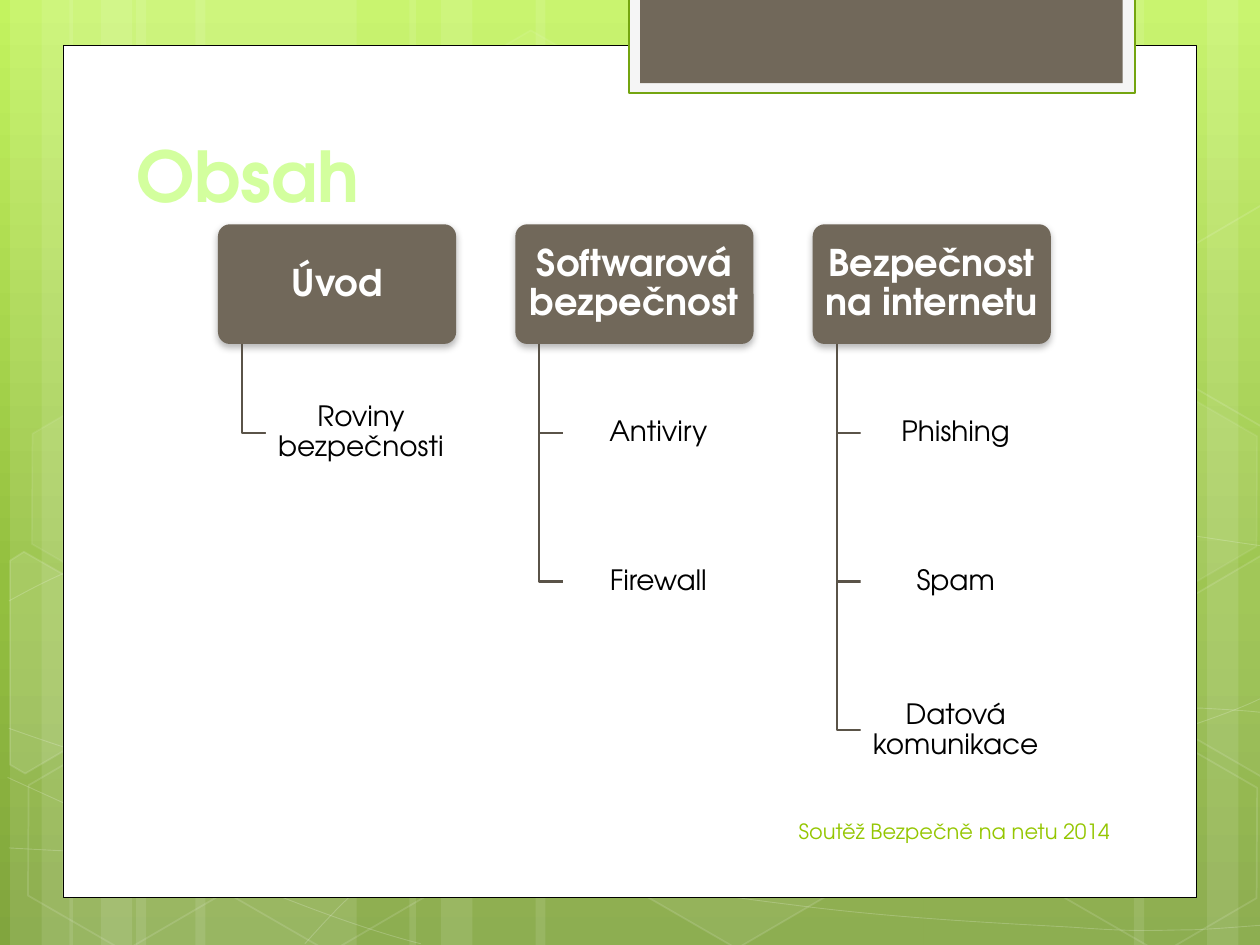
from lxml import etree
from pptx import Presentation
from pptx import util as u
from pptx.dml.color import RGBColor
from pptx.enum import shapes, text
from pptx.oxml.ns import qn

FONT = "TeX Gyre Adventor"
WHITE, BLACK = RGBColor(255, 255, 255), RGBColor(0, 0, 0)
BROWN, DARK_BROWN = RGBColor(0x71, 0x68, 0x5A), RGBColor(0x5A, 0x53, 0x48)
PALE_GREY, GREEN = RGBColor(0xF5, 0xF5, 0xF5), RGBColor(0x74, 0xA5, 0x10)
LIME, PALE_GREEN = RGBColor(0x94, 0xC6, 0x00), RGBColor(0xD3, 0xFF, 0x9E)
SKY = [(0, "C3F35F"), (62, "93BF3F"), (100, "81A53E")]

TITLE = "Obsah"
FOOTER = "Soutěž Bezpečně na netu 2014"
TOPICS = [
    ("Úvod", ["Roviny bezpečnosti"]),
    ("Softwarová bezpečnost", ["Antiviry", "Firewall"]),
    ("Bezpečnost na internetu", ["Phishing", "Spam", "Datová komunikace"]),
]

# Backdrop: left and width of each full-height stripe
STRIPES = [(1.08, 1.75), (0.08, 0.5), (0.33, 0.83), (1.55, 1.75), (0.55, 0.5), (0.8, 0.83),
           (7.33, 1.75), (9.58, 0.5), (9, 0.83), (4.25, 3.08), (3.25, 0.5), (3.5, 0.83)]
# Start point, then cubic segments: two control points and an end point
CURVES = [
    [(0.07, 6.73), (0.61, 6.76, 1.15, 6.79, 1.9, 6.78), (2.65, 6.77, 3.58, 6.75, 4.58, 6.65),
     (5.58, 6.55, 7, 6.36, 7.92, 6.17), (8.83, 5.98, 9.77, 5.68, 10.07, 5.51)],
    [(0.07, 4.77), (0.36, 4.61, 0.65, 4.46, 1.21, 4.31), (1.78, 4.16, 2.59, 3.94, 3.47, 3.87),
     (4.36, 3.8, 5.44, 3.79, 6.54, 3.87), (7.64, 3.95, 9.47, 4.26, 10.07, 4.34)],
    [(0.06, 6.17), (1.27, 6.72, 2.47, 7.27, 3.34, 7.49)],
    [(0.07, 5.78), (0.38, 5.89, 0.7, 6, 1.28, 6.16), (1.86, 6.31, 2.73, 6.56, 3.57, 6.73),
     (4.4, 6.9, 5.45, 7.08, 6.28, 7.18), (7.11, 7.29, 8, 7.33, 8.53, 7.36),
     (9.05, 7.4, 9.19, 7.38, 9.45, 7.38), (9.71, 7.37, 9.89, 7.35, 10.07, 7.34)],
    [(2.42, 7.49), (2.6, 7.29, 2.78, 7.09, 3.02, 6.91), (3.26, 6.73, 3.6, 6.53, 3.88, 6.39),
     (4.16, 6.25, 4.33, 6.19, 4.7, 6.09), (5.06, 5.99, 5.73, 5.85, 6.08, 5.78),
     (6.44, 5.71, 6.49, 5.71, 6.8, 5.69), (7.11, 5.66, 7.6, 5.63, 7.94, 5.62),
     (8.29, 5.61, 8.86, 5.62, 8.86, 5.62), (9.08, 5.62, 9.31, 5.62, 9.53, 5.62),
     (9.71, 5.63, 9.88, 5.64, 9.97, 5.65), (10.06, 5.66, 10.03, 5.65, 10.06, 5.66)],
]
# Left, top, fill opacity and line opacity in percent
HEXAGONS = [(3.34, 0.36, 4, 8), (4.97, 5.89, 6, 12), (0.11, 5.91, 0, 12), (0.14, 3.12, 7, 8),
            (1.74, 5.92, 0, 12), (7.53, 4.53, 10, 12), (8.34, 5.93, 0, 12), (8.34, 3.14, 7, 8)]
# Hexagons cut by the slide's edge: fill opacity and corners
CUT_HEXAGONS = [
    (10, [(0.08, 4.45), (0.19, 4.38), (0.96, 4.82), (0.95, 5.7), (0.2, 6.14), (0.08, 6.07)]),
    (4, [(9.26, 4.85), (10.01, 4.41), (10.09, 4.46), (10.09, 6.13), (10.02, 6.17), (9.26, 5.73)]),
    (0, [(9.26, 2.07), (10.01, 1.63), (10.1, 1.68), (10.09, 3.35), (10.02, 3.39), (9.26, 2.95)]),
]

# Hierarchy grid
LEFT, TOP, COL_STEP, ROW_STEP = 1.73, 1.78, 2.36, 1.18
HEAD_W, ITEM_W, BOX_H = 1.89, 1.51, 0.95
STEM, BRANCH = 0.19, 0.19


def set_opacity(fill, percent):
    color = fill._xPr.find(".//" + qn("a:srgbClr"))
    etree.SubElement(color, qn("a:alpha"), val=str(percent * 1000))


def paint(sp, fill=None, opacity=100, line=None, width=1, line_opacity=100):
    sp.shadow.inherit = False
    if fill is None or not opacity:
        sp.fill.background()
    else:
        sp.fill.solid()
        sp.fill.fore_color.rgb = fill
        if opacity < 100:
            set_opacity(sp.fill, opacity)
    if line is None:
        sp.line.fill.background()
    else:
        sp.line.color.rgb = line
        sp.line.width = u.Pt(width)
        if line_opacity < 100:
            set_opacity(sp.line.fill, line_opacity)
    return sp


def add_shape(s, kind, box, **look):
    return paint(s.shapes.add_shape(kind, *map(u.Inches, box)), **look)


def add_outline(s, points, close=False, **look):
    start, *rest = [(u.Inches(x), u.Inches(y)) for x, y in points]
    builder = s.shapes.build_freeform(*start)
    builder.add_line_segments(rest, close=close)
    return paint(builder.convert_to_shape(), **look)


def add_curve(s, start, *segments, **look):
    """Draw the control points as lines, then join every three lines into one cubic."""
    points = [seg[i:i + 2] for seg in segments for i in (0, 2, 4)]
    sp = add_outline(s, [start] + points, **look)
    lines = list(sp._element.iter(qn("a:lnTo")))
    for i in range(0, len(lines), 3):
        first, *others = lines[i:i + 3]
        cubic = etree.Element(qn("a:cubicBezTo"))
        first.addprevious(cubic)
        for line in (first, *others):
            cubic.append(line[0])
            line.getparent().remove(line)


def write(sp, words, align, anchor, margins=(0.1, 0.05), spacing=1, **font):
    tf = sp.text_frame
    x, y = map(u.Inches, margins)
    frame = dict(word_wrap=True, auto_size=text.MSO_AUTO_SIZE.NONE, vertical_anchor=anchor,
                 margin_left=x, margin_right=x, margin_top=y, margin_bottom=y)
    for name, value in frame.items():
        setattr(tf, name, value)
    p = tf.paragraphs[0]
    p.alignment, p.line_spacing = align, spacing
    r = p.add_run()
    r.text = words
    r.font.color.rgb = font.pop("color")
    for name, value in dict(name=FONT, **font).items():
        setattr(r.font, name, value)


def add_backdrop(s):
    s.background.fill.gradient()
    grad = s.background._cSld.find(".//" + qn("a:gradFill"))
    for child in list(grad):
        grad.remove(child)
    stops = etree.SubElement(grad, qn("a:gsLst"))
    for pos, color in SKY:
        stop = etree.SubElement(stops, qn("a:gs"), pos=str(pos * 1000))
        etree.SubElement(stop, qn("a:srgbClr"), val=color)
    etree.SubElement(grad, qn("a:lin"), ang="5400000", scaled="0")

    rect = shapes.MSO_SHAPE.RECTANGLE
    for x, w in STRIPES:
        add_shape(s, rect, (x, 0, w, 7.5), fill=WHITE, opacity=10)
    for curve in CURVES:
        add_curve(s, *curve, line=WHITE, width=0.5, line_opacity=20)
    for x, y, opacity, line_opacity in HEXAGONS:
        sp = add_shape(s, shapes.MSO_SHAPE.HEXAGON, (x, y, 1.75, 1.52), fill=WHITE,
                       opacity=opacity, line=WHITE, line_opacity=line_opacity)
        sp.adjustments[0], sp.adjustments[1] = 0.285, 1.155
        sp.rotation = 30
    for opacity, corners in CUT_HEXAGONS:
        add_outline(s, corners, close=True, fill=WHITE, opacity=opacity,
                    line=WHITE, line_opacity=12)
    add_shape(s, rect, (0.5, 0.36, 9, 6.76), fill=WHITE, line=BLACK, width=0.5)
    add_shape(s, rect, (4.99, -0.02, 4.02, 0.76), fill=PALE_GREY, line=GREEN, width=1.25)
    add_shape(s, rect, (5.08, -0.02, 3.83, 0.68), fill=BROWN)


def add_box(s, box, words, margins, fill, opacity=100, **font):
    sp = add_shape(s, shapes.MSO_SHAPE.ROUNDED_RECTANGLE, box, fill=fill, opacity=opacity)
    sp.adjustments[0] = 0.1
    write(sp, words, text.PP_ALIGN.CENTER, text.MSO_ANCHOR.MIDDLE, margins, 0.9, **font)
    return sp


def drop_shadow(sp):
    effects = sp._element.spPr.find(qn("a:effectLst"))
    shadow = etree.SubElement(effects, qn("a:outerShdw"), blurRad=str(u.Pt(4)),
                              dist=str(u.Pt(2)), dir="5400000", rotWithShape="0")
    color = etree.SubElement(shadow, qn("a:srgbClr"), val="000000")
    etree.SubElement(color, qn("a:alpha"), val="28000")


def add_hierarchy(s):
    for col, (head, items) in enumerate(TOPICS):
        x = LEFT + col * COL_STEP
        drop_shadow(add_box(s, (x, TOP, HEAD_W, BOX_H), head, (0.04, 0.03), BROWN,
                            color=WHITE, size=u.Pt(21), bold=True))
        stem_x, item_x = x + STEM, x + STEM + BRANCH
        for row, item in enumerate(items, 1):
            y = TOP + row * ROW_STEP
            middle = y + BOX_H / 2
            add_outline(s, [(stem_x, TOP + BOX_H), (stem_x, middle), (item_x, middle)],
                        line=DARK_BROWN, width=1.25)
            add_box(s, (item_x, y, ITEM_W, BOX_H), item, (0.03, 0.02), WHITE, 90,
                    color=BLACK, size=u.Pt(16))


def main():
    prs = Presentation()
    prs.slide_width, prs.slide_height = u.Inches(10), u.Inches(7.5)
    s = prs.slides.add_slide(prs.slide_layouts[5])
    add_backdrop(s)

    title = s.shapes.title
    s.shapes._spTree.append(title._element)  # bring in front of the backdrop
    title.left, title.top, title.width, title.height = map(u.Inches, (0.98, 0.52, 7.68, 1.25))
    write(title, TITLE, text.PP_ALIGN.LEFT, text.MSO_ANCHOR.BOTTOM,
          color=PALE_GREEN, size=u.Pt(40), bold=True)

    add_hierarchy(s)
    footer = s.shapes.add_textbox(*map(u.Inches, (5.08, 6.4, 3.83, 0.4)))
    write(footer, FOOTER, text.PP_ALIGN.RIGHT, text.MSO_ANCHOR.MIDDLE, color=LIME, size=u.Pt(12))
    prs.save("out.pptx")


if __name__ == "__main__":
    main()
